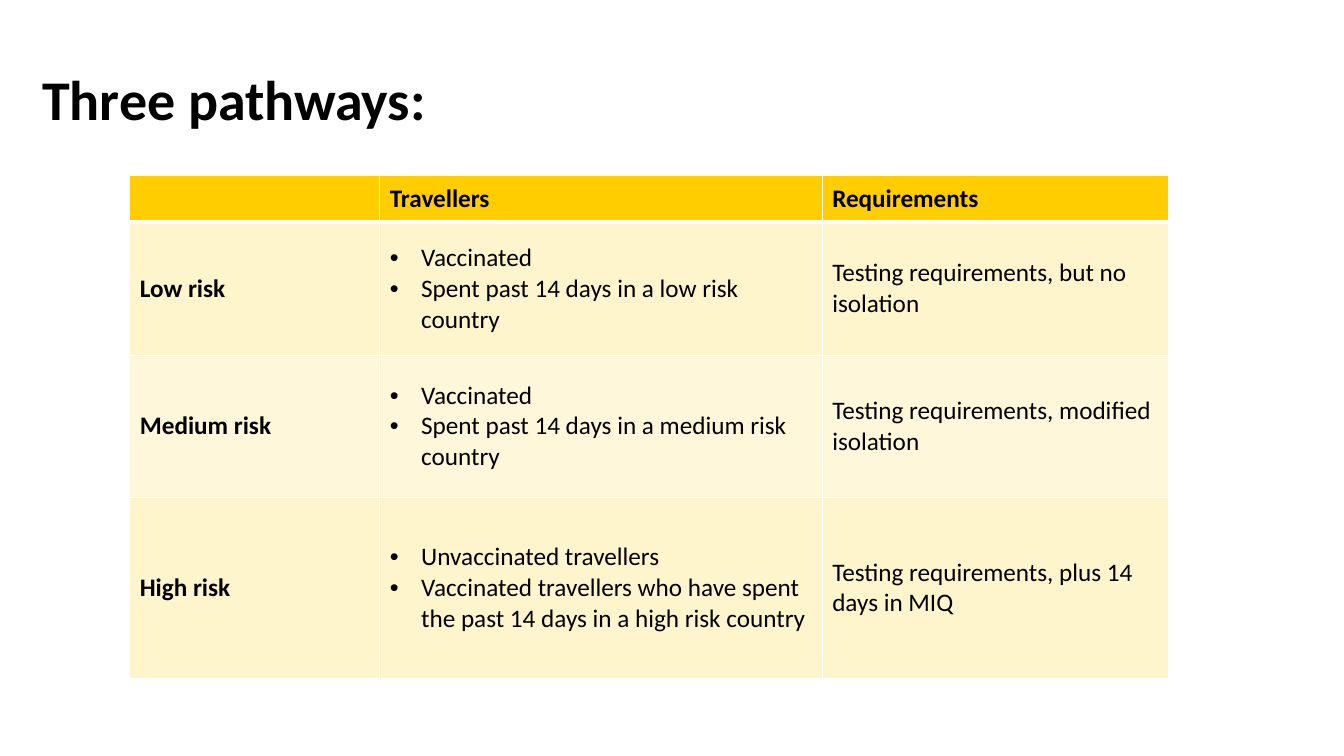
from lxml.etree import SubElement
from pptx import Presentation
from pptx.dml.color import RGBColor
from pptx.enum.text import MSO_ANCHOR, MSO_AUTO_SIZE, PP_ALIGN
from pptx.oxml.ns import qn
from pptx.util import Cm, Pt

TITLE = "Three pathways:"
HEADINGS = ["", "Travellers", "Requirements"]
PATHWAYS = [
    ("Low risk",
     ["Vaccinated", "Spent past 14 days in a low risk country"],
     "Testing requirements, but no isolation"),
    ("Medium risk",
     ["Vaccinated", "Spent past 14 days in a medium risk country"],
     "Testing requirements, modified isolation"),
    ("High risk",
     ["Unvaccinated travellers",
      "Vaccinated travellers who have spent the past 14 days in a high risk country"],
     "Testing requirements, plus 14 days in MIQ"),
]
COLUMN_WIDTHS = [6.3, 11.15, 8.74]
ROW_HEIGHTS = [1.17, 3.35, 3.58, 4.57]
HEADER_FILL = "FFCD00"
BAND_FILLS = ["FFF5CC", "FFF7D9"]
BORDER = "FFFFFF"
BULLET_INDENT = Cm(0.79)


def color(hex_code):
    return RGBColor.from_string(hex_code)


def style_text(paragraph, size, bold):
    for run in paragraph.runs:
        run.font.name = "Calibri"
        run.font.size = Pt(size)
        run.font.bold = bold
        run.font.color.rgb = color("000000")


def add_bullet(paragraph):
    properties = paragraph._p.get_or_add_pPr()
    properties.set("marL", str(BULLET_INDENT))
    properties.set("indent", str(-BULLET_INDENT))
    SubElement(properties, qn("a:buFont"), typeface="Arial")
    SubElement(properties, qn("a:buChar"), char="•")


def add_borders(cell, top, bottom):
    """Draw all four cell borders; top and bottom are widths in points."""
    properties = cell._tc.get_or_add_tcPr()
    for side, width in (("L", 1), ("R", 1), ("T", top), ("B", bottom)):
        line = SubElement(properties, qn(f"a:ln{side}"), w=str(Pt(width)))
        fill = SubElement(line, qn("a:solidFill"))
        SubElement(fill, qn("a:srgbClr"), val=BORDER)


def fill_cell(cell, content, row, column):
    add_borders(cell, top=3 if row == 1 else 1, bottom=3 if row == 0 else 1)
    cell.fill.solid()
    cell.fill.fore_color.rgb = color(BAND_FILLS[(row - 1) % 2] if row else HEADER_FILL)
    cell.vertical_anchor = MSO_ANCHOR.MIDDLE
    bulleted = isinstance(content, list)
    cell.text_frame.text = "\n".join(content) if bulleted else content
    for paragraph in cell.text_frame.paragraphs:
        if bulleted:
            add_bullet(paragraph)
        style_text(paragraph, 18, bold=row == 0 or column == 0)


def main():
    deck = Presentation()
    deck.slide_width, deck.slide_height = Cm(33.87), Cm(19.05)
    slide = deck.slides.add_slide(deck.slide_layouts[5])

    title = slide.shapes.title
    title.left, title.top, title.width, title.height = Cm(0.81), Cm(1.8), Cm(21.54), Cm(3.25)
    frame = title.text_frame
    frame.text = TITLE
    frame.word_wrap = True
    frame.auto_size = MSO_AUTO_SIZE.NONE
    frame.vertical_anchor = MSO_ANCHOR.TOP
    frame.margin_top = Cm(0.03)
    heading = frame.paragraphs[0]
    heading.alignment = PP_ALIGN.LEFT
    heading.line_spacing = 0.9
    style_text(heading, 40, bold=True)

    rows = [HEADINGS, *PATHWAYS]
    pathways = slide.shapes.add_table(
        len(rows), len(HEADINGS), Cm(3.27), Cm(4.43),
        Cm(sum(COLUMN_WIDTHS)), Cm(sum(ROW_HEIGHTS))).table
    for column, width in zip(pathways.columns, COLUMN_WIDTHS):
        column.width = Cm(width)
    for row, height in zip(pathways.rows, ROW_HEIGHTS):
        row.height = Cm(height)
    for r, contents in enumerate(rows):
        for c, content in enumerate(contents):
            fill_cell(pathways.cell(r, c), content, r, c)

    deck.save("out.pptx")


if __name__ == "__main__":
    main()
